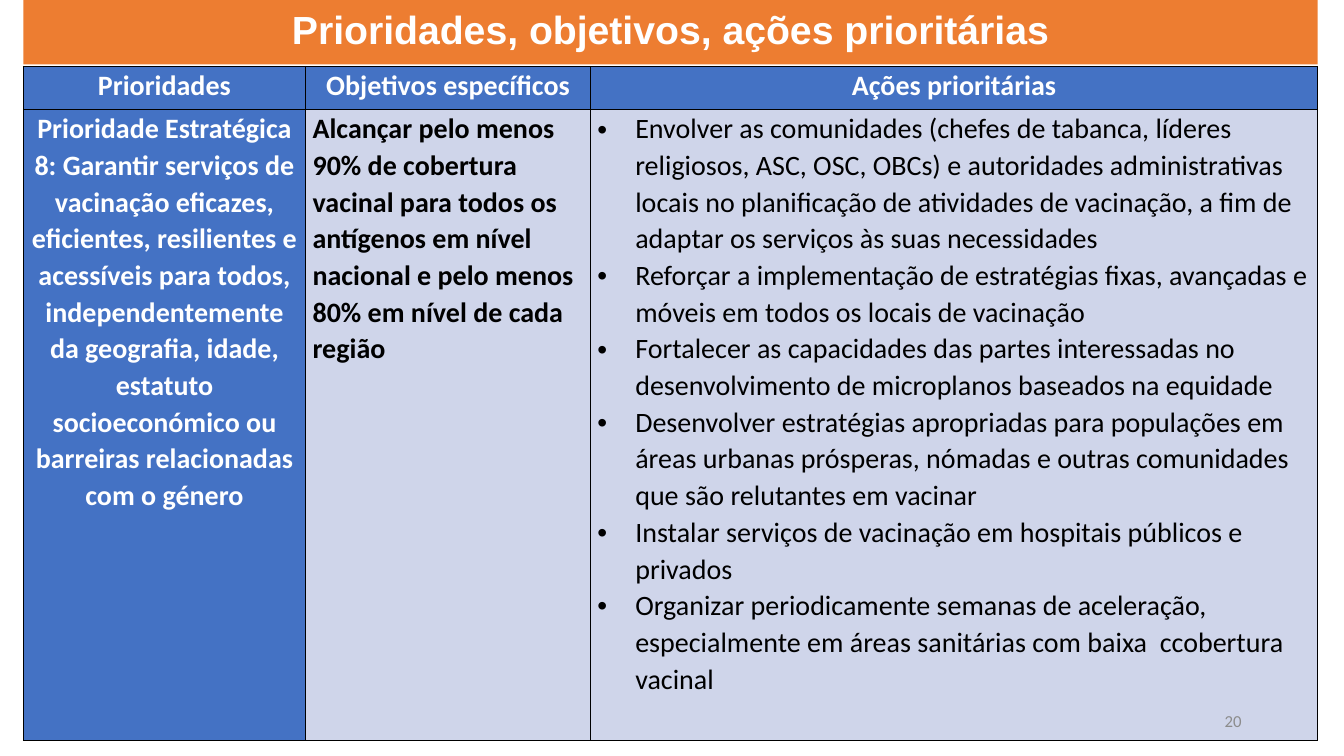
from dataclasses import dataclass

import pptx
import pptx.dml.color
import pptx.enum.text
import pptx.oxml
import pptx.oxml.ns
import pptx.util

Pt = pptx.util.Pt
RGBColor = pptx.dml.color.RGBColor
Align = pptx.enum.text.PP_ALIGN
Anchor = pptx.enum.text.MSO_ANCHOR

ORANGE = RGBColor(0xED, 0x7D, 0x31)
BLUE = RGBColor(0x44, 0x72, 0xC4)
PALE_BLUE = RGBColor(0xCF, 0xD5, 0xEA)
WHITE = RGBColor(0xFF, 0xFF, 0xFF)
BLACK = RGBColor(0x00, 0x00, 0x00)
GRAY = RGBColor(0x8C, 0x8C, 0x8C)

LEFT = Pt(16.7)
WIDTH = Pt(924.5)
COLUMN_WIDTHS = (201.6, 203.5, 519.4)
ROW_HEIGHTS = (31, 450.5)
BULLET_INDENT = Pt(27)
NAMESPACE = pptx.oxml.ns.nsdecls("a")


@dataclass(frozen=True)
class TextStyle:
    size: float
    color: RGBColor
    bold: bool = False
    font: str = "Calibri"
    alignment: Align = Align.LEFT
    line_spacing: float = 1.0


@dataclass(frozen=True)
class CellContent:
    paragraphs: tuple[str, ...]
    style: TextStyle
    fill: RGBColor
    bulleted: bool = False


TITLE_STYLE = TextStyle(28, WHITE, True, "Arial", Align.CENTER, 0.9)
HEADING_STYLE = TextStyle(20, WHITE, True, alignment=Align.CENTER, line_spacing=1.07)
OBJECTIVE_STYLE = TextStyle(20, BLACK, True, line_spacing=1.07)
ACTION_STYLE = TextStyle(20, BLACK, line_spacing=1.07)
NUMBER_STYLE = TextStyle(12, GRAY, alignment=Align.RIGHT)

HEADINGS = ("Prioridades", "Objetivos específicos", "Ações prioritárias")
PRIORITY = (
    "Prioridade Estratégica 8: Garantir serviços de vacinação eficazes, eficientes, "
    "resilientes e acessíveis para todos, independentemente da geografia, idade, "
    "estatuto socioeconómico ou barreiras relacionadas com o género"
)
OBJECTIVE = (
    "Alcançar pelo menos 90% de cobertura vacinal para todos os antígenos em nível "
    "nacional e pelo menos 80% em nível de cada região"
)
ACTIONS = (
    "Envolver as comunidades (chefes de tabanca, líderes religiosos, ASC, OSC, OBCs) e "
    "autoridades administrativas locais no planificação de atividades de vacinação, a fim "
    "de adaptar os serviços às suas necessidades",
    "Reforçar a implementação de estratégias fixas, avançadas e móveis em todos os locais "
    "de vacinação",
    "Fortalecer as capacidades das partes interessadas no desenvolvimento de microplanos "
    "baseados na equidade",
    "Desenvolver estratégias apropriadas para populações em áreas urbanas prósperas, "
    "nómadas e outras comunidades que são relutantes em vacinar",
    "Instalar serviços de vacinação em hospitais públicos e privados",
    "Organizar periodicamente semanas de aceleração, especialmente em áreas sanitárias "
    "com baixa  ccobertura vacinal",
)
TABLE_ROWS = (
    tuple(CellContent((heading,), HEADING_STYLE, BLUE) for heading in HEADINGS),
    (
        CellContent((PRIORITY,), HEADING_STYLE, BLUE),
        CellContent((OBJECTIVE,), OBJECTIVE_STYLE, PALE_BLUE),
        CellContent(ACTIONS, ACTION_STYLE, PALE_BLUE, bulleted=True),
    ),
)


def write_text(text_frame: pptx.text.text.TextFrame, text: str, style: TextStyle) -> None:
    text_frame.text = text
    text_frame.word_wrap = True
    for paragraph in text_frame.paragraphs:
        paragraph.alignment = style.alignment
        paragraph.line_spacing = style.line_spacing
        paragraph.space_before = paragraph.space_after = Pt(0)
        for run in paragraph.runs:
            run.font.name = style.font
            run.font.size = Pt(style.size)
            run.font.bold = style.bold
            run.font.color.rgb = style.color


def add_bullet(paragraph: pptx.text.text._Paragraph) -> None:
    properties = paragraph._p.get_or_add_pPr()
    properties.set("marL", str(BULLET_INDENT))
    properties.set("indent", str(-BULLET_INDENT))
    for element in ('buFont {} typeface="Arial"', 'buChar {} char="•"'):
        properties.append(pptx.oxml.parse_xml(f"<a:{element.format(NAMESPACE)}/>"))


def add_borders(cell: pptx.table._Cell) -> None:
    properties = cell._tc.get_or_add_tcPr()
    for index, side in enumerate("LRTB"):
        border = pptx.oxml.parse_xml(
            f'<a:ln{side} {NAMESPACE} w="{Pt(1)}"><a:solidFill>'
            f'<a:srgbClr val="{BLACK}"/></a:solidFill></a:ln{side}>'
        )
        properties.insert(index, border)


def fill_cell(cell: pptx.table._Cell, content: CellContent) -> None:
    cell.margin_left = cell.margin_right = Pt(5)
    cell.margin_top = cell.margin_bottom = Pt(0)
    cell.vertical_anchor = Anchor.TOP
    cell.fill.solid()
    cell.fill.fore_color.rgb = content.fill
    write_text(cell.text_frame, "\n".join(content.paragraphs), content.style)
    for paragraph in cell.text_frame.paragraphs:
        if content.bulleted:
            add_bullet(paragraph)
        else:
            paragraph.space_before = Pt(12)
            paragraph.space_after = Pt(8)
    add_borders(cell)


def add_title(slide: pptx.slide.Slide) -> None:
    title = slide.shapes.title
    title.left, title.top, title.width, title.height = LEFT, Pt(0), WIDTH, Pt(46)
    title.fill.solid()
    title.fill.fore_color.rgb = ORANGE
    write_text(title.text_frame, "Prioridades, objetivos, ações prioritárias", TITLE_STYLE)
    title.text_frame.vertical_anchor = Anchor.MIDDLE
    title.text_frame.auto_size = pptx.enum.text.MSO_AUTO_SIZE.NONE


def add_priorities_table(slide: pptx.slide.Slide) -> None:
    table = slide.shapes.add_table(
        len(ROW_HEIGHTS), len(COLUMN_WIDTHS), LEFT, Pt(47.5), WIDTH, Pt(sum(ROW_HEIGHTS))
    ).table
    for column, width in zip(table.columns, COLUMN_WIDTHS):
        column.width = Pt(width)
    for row, height, contents in zip(table.rows, ROW_HEIGHTS, TABLE_ROWS):
        row.height = Pt(height)
        for cell, content in zip(row.cells, contents):
            fill_cell(cell, content)


def add_slide_number(slide: pptx.slide.Slide) -> None:
    number = slide.shapes.add_textbox(Pt(678), Pt(500.5), Pt(216), Pt(28.8))
    write_text(number.text_frame, "20", NUMBER_STYLE)
    number.text_frame.vertical_anchor = Anchor.MIDDLE


def main() -> None:
    presentation = pptx.Presentation()
    presentation.slide_width = Pt(960)
    presentation.slide_height = Pt(540)
    slide = presentation.slides.add_slide(presentation.slide_layouts.get_by_name("Title Only"))
    add_title(slide)
    add_priorities_table(slide)
    add_slide_number(slide)
    presentation.save("out.pptx")


if __name__ == "__main__":
    main()
